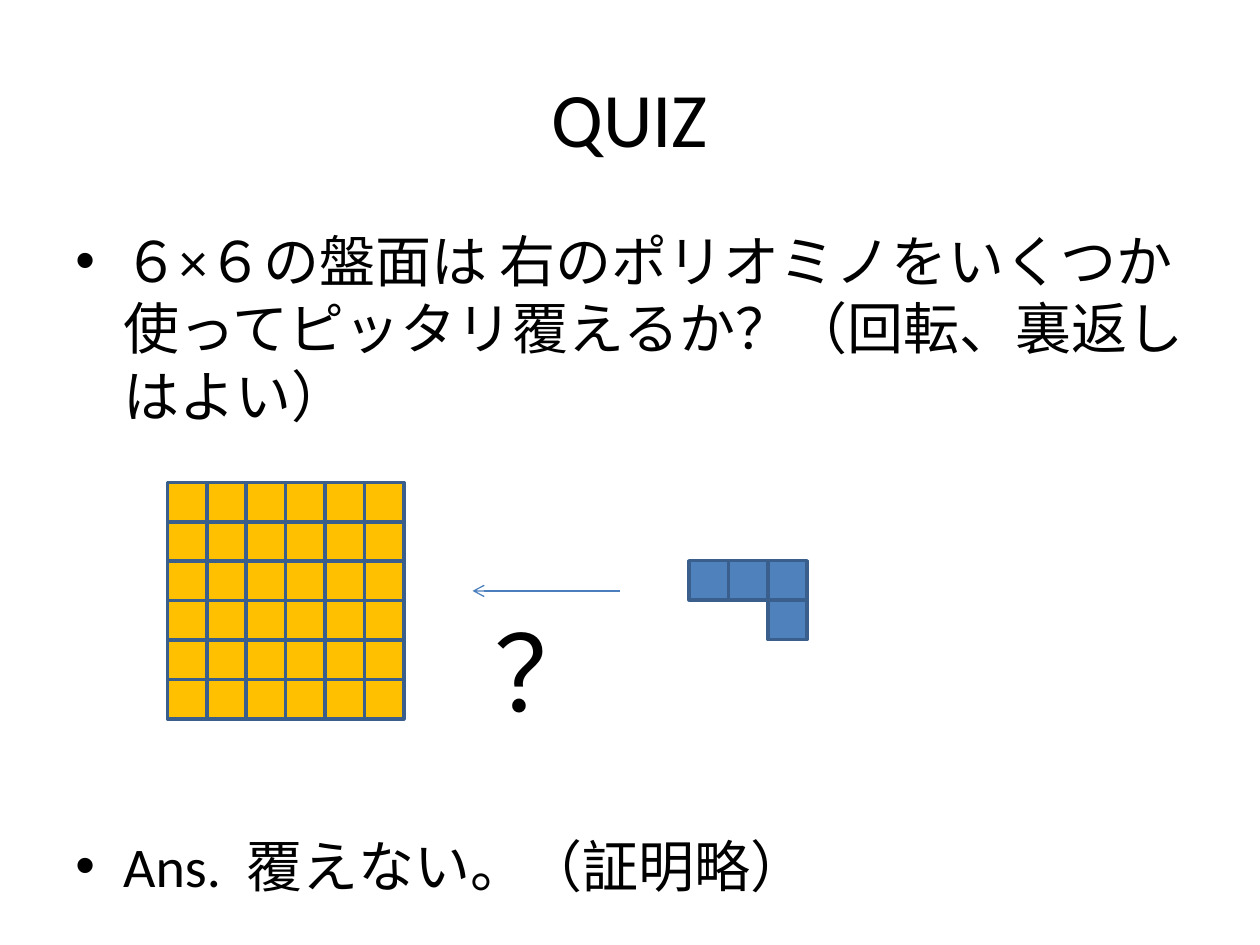
from dataclasses import dataclass
from itertools import product

from lxml.etree import SubElement
from pptx import Presentation
from pptx.dml.color import RGBColor
from pptx.enum.shapes import MSO_CONNECTOR as Conn, MSO_SHAPE as Shape
from pptx.enum.text import MSO_ANCHOR as Anchor, MSO_AUTO_SIZE as Fit, PP_ALIGN as Align
from pptx.oxml.ns import qn
from pptx.util import Inches, Pt

FONT = "Calibri"
CELL = Inches(5) // 16


@dataclass
class Tiles:
    left: float
    top: float
    fill: str
    cells: list[tuple[int, int]]  # column, row


BOARD = Tiles(1.33, 3.83, "FFC000", list(product(range(6), repeat=2)))
PIECE = Tiles(5.47, 4.45, "4F81BD", [(0, 0), (1, 0), (2, 0), (2, 1)])


def paint(target, color: str) -> None:
    """Give a fill or a line one solid colour."""
    fill = getattr(target, "fill", target)
    fill.solid()
    fill.fore_color.rgb = RGBColor.from_string(color)


def draw_tiles(slide, tiles: Tiles) -> None:
    group = slide.shapes.add_group_shape()
    for col, row in tiles.cells:
        cell = group.shapes.add_shape(
            Shape.RECTANGLE, Inches(tiles.left) + col * CELL,
            Inches(tiles.top) + row * CELL, CELL, CELL)
        cell.shadow.inherit = False
        paint(cell.fill, tiles.fill)
        paint(cell.line, "3A5F8C")
        cell.line.width = Pt(2)


def add_text(slide, box: tuple[float, float, float, float], runs: list[str], size: float):
    """Add a one-paragraph text box and return its shape."""
    shape = slide.shapes.add_textbox(*map(Inches, box))
    shape.text_frame.word_wrap = True
    para = shape.text_frame.paragraphs[0]
    for text in runs:
        run = para.add_run()
        run.text = text
        run.font.name = FONT
        run.font.size = Pt(size)
        paint(run.font, "000000")
    return shape


def add_bullet(slide, top: float, height: float, runs: list[str]):
    shape = add_text(slide, (0.5, top, 9, height), runs, 32)
    props = shape.text_frame.paragraphs[0]._p.get_or_add_pPr()
    props.set("marL", str(Inches(0.38)))
    props.set("indent", str(Inches(-0.38)))
    SubElement(props, qn("a:buFont"), typeface="Arial")
    SubElement(props, qn("a:buChar"), char="•")
    return shape


def draw_arrow(slide, start: float, end: float, top: float) -> None:
    line = slide.shapes.add_connector(
        Conn.STRAIGHT, Inches(start), Inches(top), Inches(end), Inches(top))
    paint(line.line, "4B7EBC")
    line.line.width = Pt(0.75)
    SubElement(line.line._get_or_add_ln(), qn("a:tailEnd"), type="arrow")
    SubElement(line._element.spPr, qn("a:effectLst"))


def main() -> None:
    deck = Presentation()
    deck.slide_width, deck.slide_height = Inches(10), Inches(7.5)
    slide = deck.slides.add_slide(deck.slide_layouts[6])

    title = add_text(slide, (0.5, 0.3, 9, 1.25), ["QUIZ"], 44).text_frame
    title.vertical_anchor = Anchor.MIDDLE
    title.paragraphs[0].alignment = Align.CENTER

    add_bullet(slide, 1.75, 1.75, [
        "６×６の盤面は 右のポリオミノをいくつか使ってピッタリ覆えるか？（回転、裏返しはよい）"])
    answer = add_bullet(slide, 6.55, 0.65, ["Ans.", " ", "覆えない。（証明略）"])
    gap = answer.text_frame.paragraphs[0].runs[1]
    gap.font._element.set("spc", "700")

    draw_tiles(slide, PIECE)
    draw_tiles(slide, BOARD)
    draw_arrow(slide, 4.92, 3.75, 4.69)

    mark = add_text(slide, (3.83, 4.77, 0.63, 1.11), ["？"], 60).text_frame
    mark.word_wrap = False
    mark.auto_size = Fit.SHAPE_TO_FIT_TEXT
    mark.paragraphs[0].alignment = Align.CENTER

    deck.save("out.pptx")


if __name__ == "__main__":
    main()
